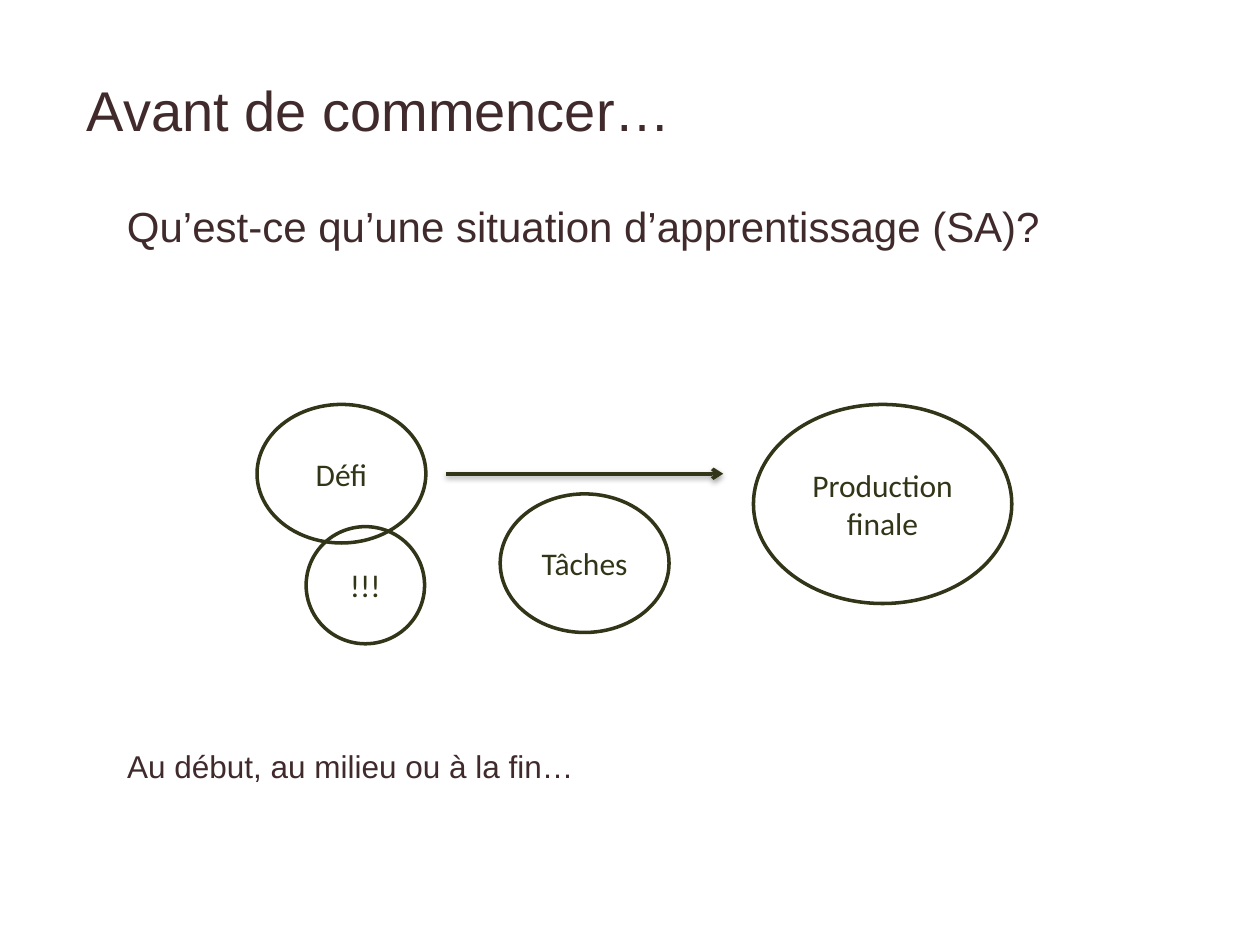
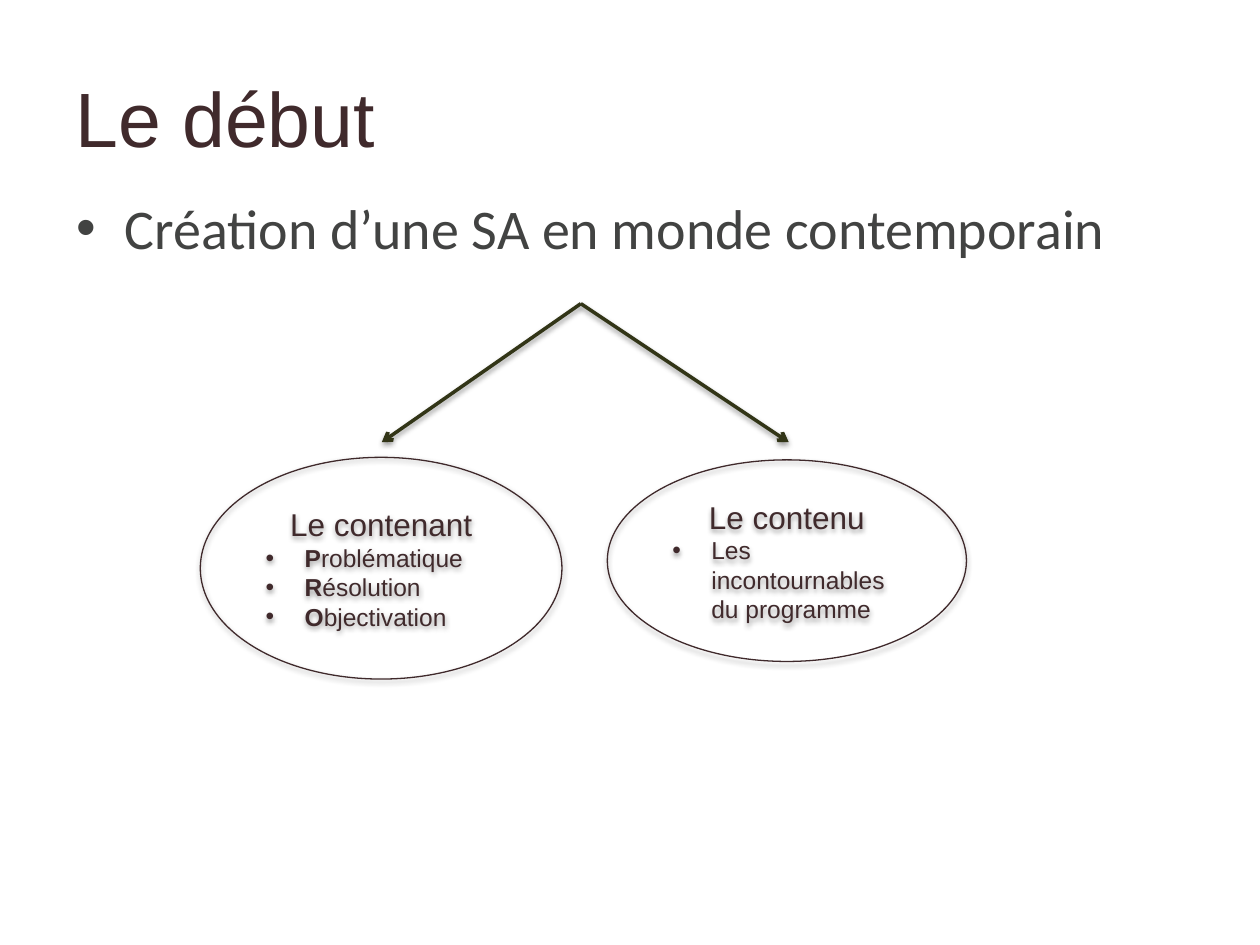
from dataclasses import dataclass

from lxml import etree
from pptx import Presentation, util as u
from pptx.dml.color import RGBColor as Rgb
from pptx.enum import shapes as es, text as et
from pptx.oxml.ns import qn


@dataclass(frozen=True)
class Theme:
    plum: Rgb = Rgb(0x40, 0x2A, 0x2C)
    olive: Rgb = Rgb(0x32, 0x35, 0x17)
    edge: Rgb = Rgb(0x3F, 0x29, 0x2B)
    gray: Rgb = Rgb(0x42, 0x43, 0x42)
    sans: str = "Arial"
    soft: str = "Calibri"
    huge: int = 44
    large: int = 32
    lead: int = 24
    label: int = 18
    small: int = 14
    thick: float = 2
    thin: float = 0.75


T = Theme()
WIDE, HIGH = u.Inches(10), u.Inches(7.5)
COLS, ROWS = 100, 75


# Grid: a place is (column, row, columns, rows)
def col(n):
    return round(WIDE * n / COLS)


def row(n):
    return round(HIGH * n / ROWS)


def area(x, y, w, h):
    return col(x), row(y), col(w), row(h)


# Effects: an empty list switches the shadow off
def effect(item, shadow):
    box = etree.SubElement(item.element.spPr, qn("a:effectLst"))
    if shadow:
        cast = etree.SubElement(box, qn("a:outerShdw"), blurRad="40000",
                                dist="20000", dir="5400000", rotWithShape="0")
        tint = etree.SubElement(cast, qn("a:srgbClr"), val="000000")
        etree.SubElement(tint, qn("a:alpha"), val="38000")


# Text: runs are (words, bold) pairs, or one plain string
def write(par, runs, size, color, face=T.sans, mid=False, indent=0):
    if indent:
        step = u.Inches(indent)
        props = par._p.get_or_add_pPr()
        props.set("marL", str(step))
        props.set("indent", str(-step))
        etree.SubElement(props, qn("a:buFont"), typeface=T.sans)
        etree.SubElement(props, qn("a:buChar"), char="•")
    par.alignment = et.PP_ALIGN.CENTER if mid else et.PP_ALIGN.LEFT
    for words, bold in [(runs, False)] if isinstance(runs, str) else runs:
        run = par.add_run()
        run.text = words
        font = run.font
        font.name, font.size, font.bold = face, u.Pt(size), bold
        font.color.rgb = color


def block(slide, place, words, size, color=T.plum, middle=False, **style):
    frame = slide.shapes.add_textbox(*area(*place)).text_frame
    frame.word_wrap = True
    if middle:
        frame.vertical_anchor = et.MSO_ANCHOR.MIDDLE
    write(frame.paragraphs[0], words, size, color, **style)


def title(slide, place, words, size):
    block(slide, place, words, size, middle=True)


# Outlined ellipse; returns its text frame
def oval(parts, place, color, width, shadow=False):
    item = parts.add_shape(es.MSO_SHAPE.OVAL, *area(*place))
    item.fill.background()
    item.line.color.rgb, item.line.width = color, u.Pt(width)
    effect(item, shadow)
    frame = item.text_frame
    frame.word_wrap = True
    frame.vertical_anchor = et.MSO_ANCHOR.MIDDLE
    return frame


def step(parts, place, words):
    frame = oval(parts, place, T.olive, T.thick)
    write(frame.paragraphs[0], words, T.label, T.olive, T.soft, mid=True)


def topic(slide, place, head, points):
    frame = oval(slide.shapes, place, T.edge, T.thin, shadow=True)
    write(frame.paragraphs[0], head, T.label, T.plum, mid=True)
    for point in points:
        write(frame.add_paragraph(), point, T.small, T.plum, indent=0.31)


def arrow(parts, start, end):
    item = parts.add_connector(es.MSO_CONNECTOR.STRAIGHT, col(start[0]),
                               row(start[1]), col(end[0]), row(end[1]))
    item.line.color.rgb, item.line.width = T.olive, u.Pt(T.thick)
    etree.SubElement(item.line._get_or_add_ln(), qn("a:tailEnd"), type="arrow")
    effect(item, True)


# Slide 1: from the challenge to the final production
def before(slide):
    title(slide, (5.9, 2.1, 90.8, 13.1), "Avant de commencer…", T.large)
    block(slide, (9.1, 15.4, 86.6, 49.6),
          "Qu’est-ce qu’une situation d’apprentissage (SA)?", T.lead)
    parts = slide.shapes.add_group_shape().shapes
    for place, words in (
        ((20.4, 32.1, 13.4, 11), "Défi"),
        ((59.8, 32.1, 20.5, 15.8), "Production finale"),
        ((24.3, 41.8, 9.4, 9.3), "!!!"),
        ((39.7, 39.2, 13.4, 11), "Tâches"),
    ):
        step(parts, place, words)
    arrow(parts, (35.4, 37.6), (57.4, 37.6))
    block(slide, (9.1, 58.8, 71.2, 4), "Au début, au milieu ou à la fin…",
          T.label)


# Slide 2: one idea splits into container and content
def start(slide):
    title(slide, (5, 3, 90, 12.5), "Le début", T.huge)
    block(slide, (5.1, 14.9, 90, 54.6),
          "Création d’une SA en monde contemporain", T.large, T.gray,
          face=T.soft, indent=0.38)
    stages = ("Problématique", "Résolution", "Objectivation")
    topic(slide, (15.9, 36.3, 28.7, 17.6), "Le contenant",
          [((s[0], True), (s[1:], False)) for s in stages])
    for x in (30.3, 62.6):
        arrow(slide.shapes, (46.1, 24.1), (x, 35.1))
    topic(slide, (48.2, 36.5, 28.5, 16), "Le contenu",
          ["Les incontournables du programme"])


def main():
    deck = Presentation()
    deck.slide_width, deck.slide_height = WIDE, HIGH
    for build in (before, start):
        build(deck.slides.add_slide(deck.slide_layouts[6]))
    deck.save("out.pptx")


if __name__ == "__main__":
    main()
